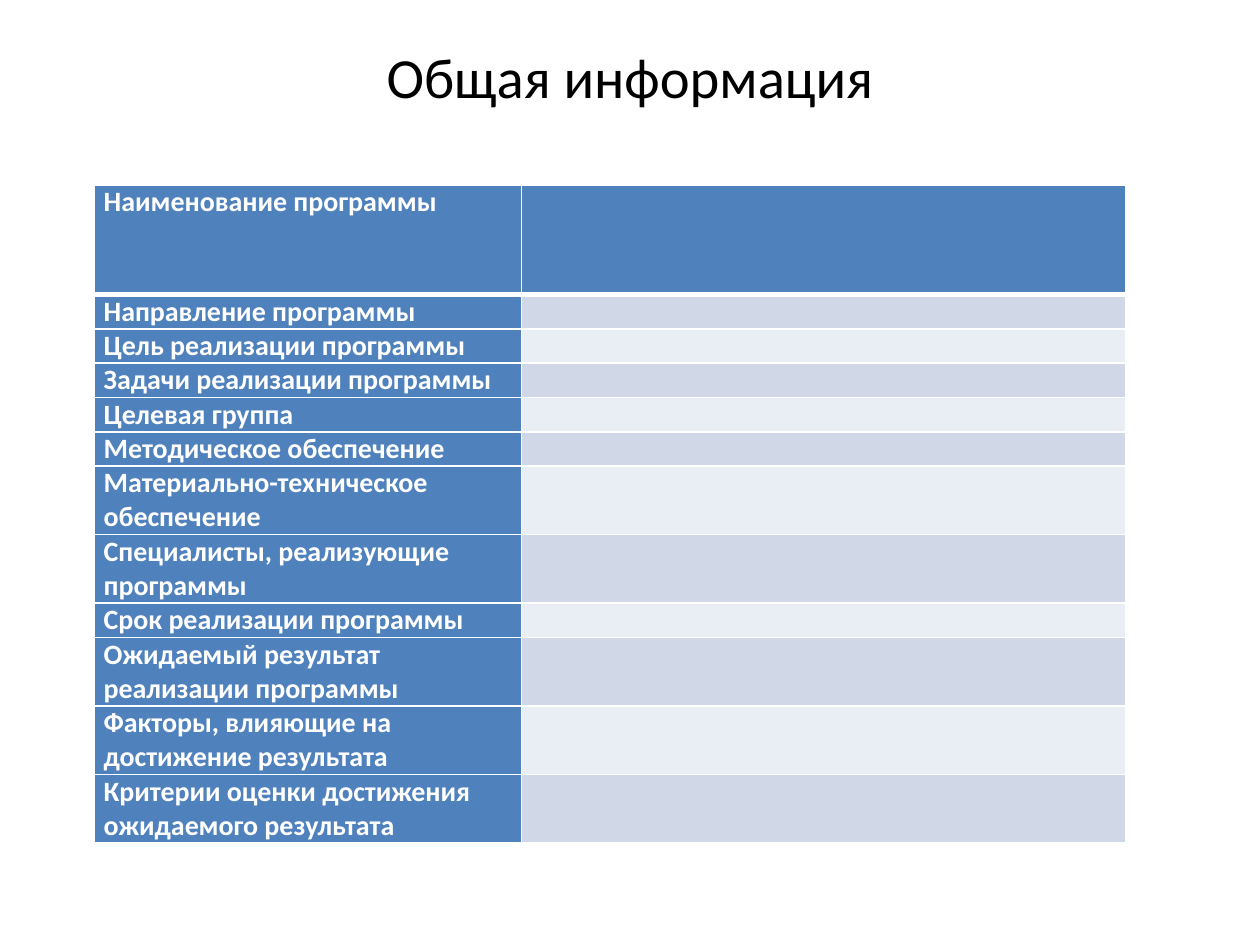
from lxml import etree
from pptx import Presentation
from pptx import util as u
from pptx.dml.color import RGBColor
from pptx.enum import text
from pptx.oxml.ns import qn

TITLE = "Общая информация"
# Row label and the number of lines it takes
ROWS = [
    ("Наименование программы", 1),
    ("Направление программы", 1),
    ("Цель реализации программы", 1),
    ("Задачи реализации программы", 1),
    ("Целевая группа", 1),
    ("Методическое обеспечение", 1),
    ("Материально-техническое обеспечение", 2),
    ("Специалисты, реализующие программы", 2),
    ("Срок реализации программы", 1),
    ("Ожидаемый результат реализации программы", 2),
    ("Факторы, влияющие на достижение результата", 2),
    ("Критерии оценки достижения ожидаемого результата", 2),
]
COLORS = {"head": "4F81BD", "odd": "D0D8E8", "even": "E9EDF4",
          "white": "FFFFFF", "black": "000000"}
FONT = "Calibri"
COLS = (8.6, 12.19)
HEADER_H, LINE_H = 2.21, 0.69


def rgb(name):
    return RGBColor.from_string(COLORS[name])


def add_run(p, words, size, color, bold=False):
    r = p.add_run()
    r.text = words
    r.font.name, r.font.size, r.font.bold = FONT, u.Pt(size), bold
    r.font.color.rgb = rgb(color)


def set_borders(cell, top, bottom):
    """White borders, widths in points; they precede the fill in the XML."""
    tc_pr = cell._tc.get_or_add_tcPr()
    sides = (("L", 1), ("R", 1), ("T", top), ("B", bottom))
    for i, (side, width) in enumerate(sides):
        ln = etree.Element(qn(f"a:ln{side}"), w=str(u.Pt(width)))
        fill = etree.SubElement(ln, qn("a:solidFill"))
        etree.SubElement(fill, qn("a:srgbClr"), val=COLORS["white"])
        tc_pr.insert(i, ln)


def format_cell(cell, fill, top, bottom):
    cell.margin_left = cell.margin_right = u.Cm(0.18)
    cell.margin_top = cell.margin_bottom = 0
    cell.fill.solid()
    cell.fill.fore_color.rgb = rgb(fill)
    set_borders(cell, top, bottom)


prs = Presentation()
prs.slide_width, prs.slide_height = u.Cm(25.4), u.Cm(19.05)
s = prs.slides.add_slide(prs.slide_layouts[5])

# Title
sp = s.shapes.title
sp.left, sp.top, sp.width, sp.height = map(u.Cm, (1.27, 0.76, 22.86, 1.55))
tf = sp.text_frame
tf.word_wrap = True
tf.auto_size = text.MSO_AUTO_SIZE.NONE
tf.vertical_anchor = text.MSO_ANCHOR.MIDDLE
p = tf.paragraphs[0]
p.alignment = text.PP_ALIGN.CENTER
add_run(p, TITLE, 32.4, "black")

# Table
heights = [HEADER_H] + [LINE_H * lines for _, lines in ROWS[1:]]
table = s.shapes.add_table(len(ROWS), len(COLS), u.Cm(1.91), u.Cm(3.73),
                           u.Cm(sum(COLS)), u.Cm(sum(heights))).table
for col, width in zip(table.columns, COLS):
    col.width = u.Cm(width)

for i, (label, _) in enumerate(ROWS):
    table.rows[i].height = u.Cm(heights[i])
    band = "head" if i == 0 else "odd" if i % 2 else "even"
    top, bottom = (3 if i == 1 else 1), (3 if i == 0 else 1)
    name_cell, value_cell = table.cell(i, 0), table.cell(i, 1)
    format_cell(name_cell, "head", top, bottom)
    format_cell(value_cell, band, top, bottom)
    add_run(name_cell.text_frame.paragraphs[0], label, 16, "white", True)
    # The size of an empty cell keeps its row from growing
    p = value_cell.text_frame.paragraphs[0]
    etree.SubElement(p._p, qn("a:endParaRPr"), sz="1600")

prs.save("out.pptx")
